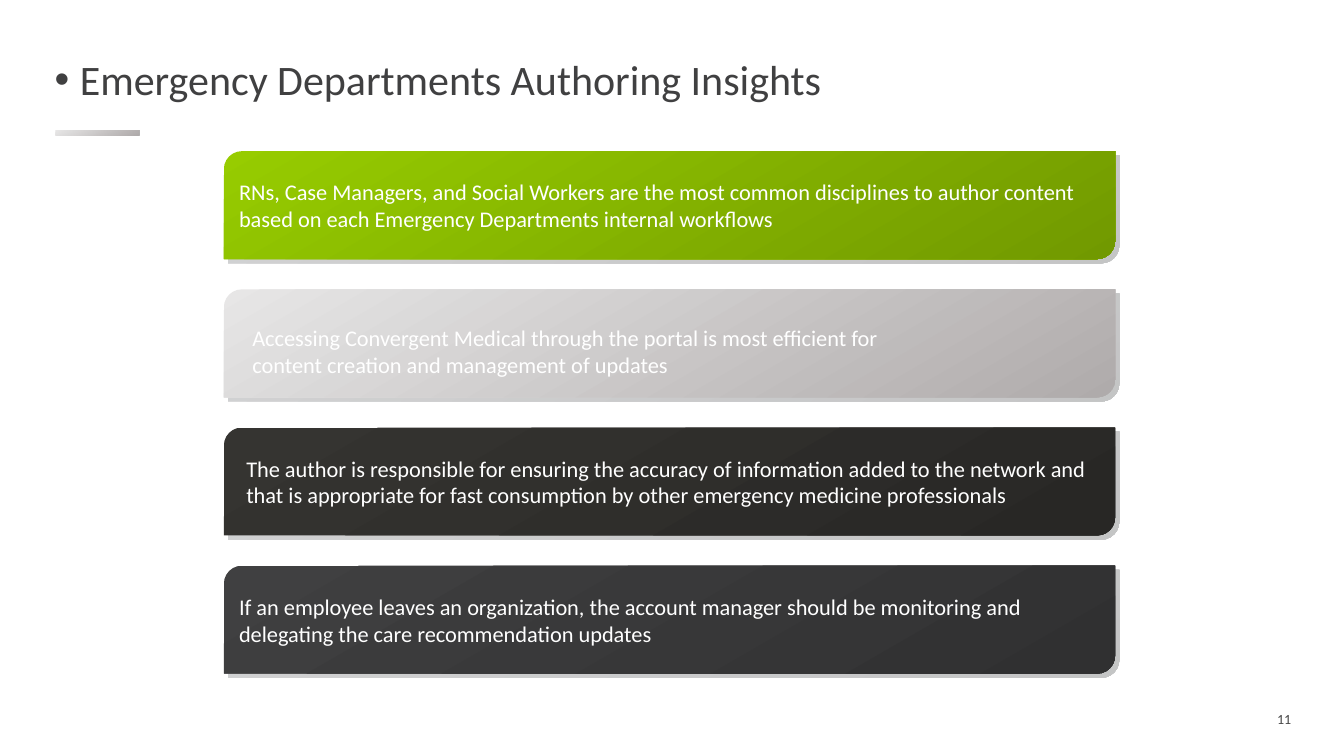
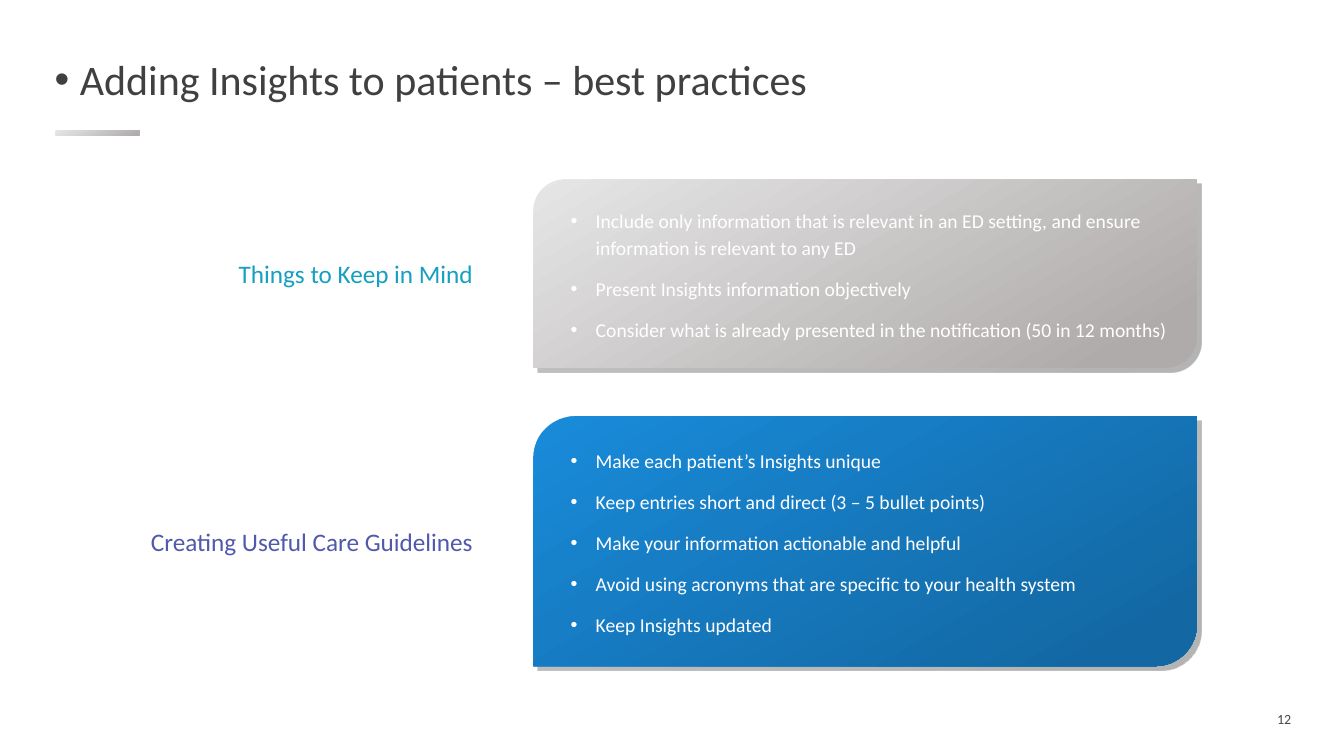
"""Build two slides on authoring insights: four key statements and two practice lists."""
from dataclasses import dataclass
from typing import NamedTuple

from lxml import etree
from pptx import Presentation, util as u
from pptx.dml.color import RGBColor
from pptx.enum import shapes, text
from pptx.oxml.ns import qn

COLUMNS, ROWS = 160, 90
SLIDE_WIDTH, SLIDE_HEIGHT = u.Inches(13.333), u.Inches(7.5)
FONT = "Calibri"
WHITE, CHARCOAL, NUMBER_GREY = "FFFFFF", "404041", "474747"
TITLE_ONLY, COMPARISON = 5, 4
SHADOW_OFFSET = 0.5
SHADOW_OPACITY = 35


class Box(NamedTuple):
    column: float
    row: float
    columns: float
    rows: float

    def shifted(self, columns: float, rows: float) -> "Box":
        return self._replace(column=self.column + columns, row=self.row + rows)

    def emu(self) -> tuple:
        across, down = SLIDE_WIDTH / COLUMNS, SLIDE_HEIGHT / ROWS
        return (round(self.column * across), round(self.row * down),
                round(self.columns * across), round(self.rows * down))


class Gradient(NamedTuple):
    start: str
    end: str
    end_share: float = 1.0


class Margins(NamedTuple):
    left: float = 0.1
    top: float = 0.05
    right: float = 0.1
    bottom: float = 0.05


@dataclass(frozen=True)
class TextStyle:
    size: int
    color: str = WHITE
    align: text.PP_ALIGN = text.PP_ALIGN.LEFT
    bullet_indent: float = 0
    line_spacing: float = 1.0
    space_before: float = 0


@dataclass(frozen=True)
class Statement:
    wording: str
    fill: Gradient
    margins: Margins = Margins()


@dataclass(frozen=True)
class Practice:
    heading: str
    heading_color: str
    points: tuple
    fill: Gradient
    row: float
    rows: float


SILVER = Gradient("E7E6E6", "AFABAB")
STATEMENT_SHADOW = Gradient("818285", "58595B")
PRACTICE_SHADOW = Gradient("58595B", "2C2C2D", 0.9)

ACCENT_BOX = Box(6.6, 15.5, 10, 0.6)
TITLE_BOX = Box(5.3, 6.25, 149.5, 7)
NUMBER_BOX = Box(113, 84.6, 41.9, 1.9)
FIRST_STATEMENT_BOX = Box(26.65, 18, 106.1, 12.85)
STATEMENT_PITCH = 16.45
FLAT = Margins(top=0, bottom=0)

TITLE_STYLE = TextStyle(30, CHARCOAL, bullet_indent=0.25, line_spacing=0.9, space_before=10)
NUMBER_STYLE = TextStyle(10, NUMBER_GREY, text.PP_ALIGN.RIGHT)
STATEMENT_STYLE = TextStyle(16)
POINT_STYLE = TextStyle(14, bullet_indent=0.31, line_spacing=1.14, space_before=10)

STATEMENTS = (
    Statement("RNs, Case Managers, and Social Workers are the most common disciplines to author "
              "content based on each Emergency Departments internal workflows",
              Gradient("97CC00", "719900")),
    Statement("Accessing Convergent Medical through the portal is most efficient for content "
              "creation and management of updates",
              SILVER, Margins(left=0.23, top=0.2, right=2.04)),
    Statement("The author is responsible for ensuring the accuracy of information added to the "
              "network and that is appropriate for fast consumption by other emergency medicine "
              "professionals",
              Gradient("353431", "282725"), Margins(left=0.17)),
    Statement("If an employee leaves an organization, the account manager should be monitoring "
              "and delegating the care recommendation updates",
              Gradient("404041", "303031")),
)

PRACTICES = (
    Practice("Things to Keep in Mind", "14A0C0",
             ("Include only information that is relevant in an ED setting, and ensure "
              "information is relevant to any ED",
              "Present Insights information objectively",
              "Consider what is already presented in the notification (50 in 12 months)"),
             SILVER._replace(end_share=0.9), 21.35, 22.45),
    Practice("Creating Useful Care Guidelines", "5059AB",
             ("Make each patient’s Insights unique",
              "Keep entries short and direct (3 – 5 bullet points)",
              "Make your information actionable and helpful",
              "Avoid using acronyms that are specific to your health system",
              "Keep Insights updated"),
             Gradient("198BDA", "1368A3", 0.9), 49.55, 29.75),
)


def rgb(color: str) -> RGBColor:
    return RGBColor.from_string(color)


def place(shape, box: Box) -> None:
    shape.left, shape.top, shape.width, shape.height = box.emu()


def add_filled(container, kind, box: Box, gradient: Gradient, opacity: int = 100):
    shape = container.add_shape(kind, *box.emu())
    shape.shadow.inherit = False
    shape.line.fill.background()
    shape.fill.gradient()
    shape.fill.gradient_angle = 300
    first, last = shape.fill.gradient_stops
    first.color.rgb, last.color.rgb = rgb(gradient.start), rgb(gradient.end)
    first.position, last.position = 0, gradient.end_share
    if opacity < 100:
        for color in shape.element.spPr.iter(qn("a:srgbClr")):
            etree.SubElement(color, qn("a:alpha")).set("val", str(opacity * 1000))
    return shape


def add_card(container, box: Box, fill: Gradient, shadow: Gradient):
    kind = shapes.MSO_SHAPE.ROUND_2_DIAG_RECTANGLE
    add_filled(container, kind, box.shifted(SHADOW_OFFSET, SHADOW_OFFSET), shadow, SHADOW_OPACITY)
    return add_filled(container, kind, box, fill)


def add_bullet(paragraph, indent: float) -> None:
    properties = paragraph._p.get_or_add_pPr()
    properties.set("marL", str(u.Inches(indent)))
    properties.set("indent", str(u.Inches(-0.25)))
    etree.SubElement(properties, qn("a:buFont")).set("typeface", "Arial")
    etree.SubElement(properties, qn("a:buChar")).set("char", "•")


def write(shape, lines: tuple, style: TextStyle, margins: Margins = Margins()) -> None:
    frame = shape.text_frame
    frame.text = "\n".join(lines)
    frame.word_wrap = True
    frame.auto_size = text.MSO_AUTO_SIZE.NONE
    frame.vertical_anchor = text.MSO_ANCHOR.MIDDLE
    frame.margin_left, frame.margin_top, frame.margin_right, frame.margin_bottom = map(
        u.Inches, margins)
    for paragraph in frame.paragraphs:
        paragraph.alignment = style.align
        if style.bullet_indent:
            add_bullet(paragraph, style.bullet_indent)
        else:
            properties = paragraph._p.get_or_add_pPr()
            properties.set("marL", "0")
            properties.set("indent", "0")
            etree.SubElement(properties, qn("a:buNone"))
        paragraph.line_spacing = style.line_spacing
        paragraph.space_before = u.Pt(style.space_before)
        paragraph.font.name = FONT
        paragraph.font.size = u.Pt(style.size)
        paragraph.font.bold = False
        paragraph.font.color.rgb = rgb(style.color)


def add_slide(deck, layout: int, title: str, number: int):
    slide = deck.slides.add_slide(deck.slide_layouts[layout])
    place(slide.shapes.title, TITLE_BOX)
    write(slide.shapes.title, (title,), TITLE_STYLE, FLAT)
    write(slide.shapes.add_textbox(*NUMBER_BOX.emu()), (str(number),), NUMBER_STYLE, FLAT)
    return slide


def add_statements(slide) -> None:
    for index, statement in enumerate(STATEMENTS):
        box = FIRST_STATEMENT_BOX.shifted(0, index * STATEMENT_PITCH)
        group = slide.shapes.add_group_shape()
        card = add_card(group.shapes, box, statement.fill, STATEMENT_SHADOW)
        write(card, (statement.wording,), STATEMENT_STYLE, statement.margins)


def add_practices(slide) -> None:
    for index, practice in enumerate(PRACTICES):
        heading = slide.placeholders[2 * index + 1]
        points = slide.placeholders[2 * index + 2]
        card_box = Box(63.5, practice.row, 79, practice.rows)
        add_card(slide.shapes, card_box, practice.fill, PRACTICE_SHADOW)
        slide.shapes.element.append(points.element)
        place(points, card_box._replace(column=66, columns=74.65))
        write(points, practice.points, POINT_STYLE)
        place(heading, card_box._replace(column=15, columns=42.5))
        write(heading, (practice.heading,),
              TextStyle(18, practice.heading_color, text.PP_ALIGN.RIGHT))


def main() -> None:
    deck = Presentation()
    deck.slide_width, deck.slide_height = SLIDE_WIDTH, SLIDE_HEIGHT
    statements = add_slide(deck, TITLE_ONLY, "Emergency Departments Authoring Insights", 11)
    accent = add_filled(statements.shapes, shapes.MSO_SHAPE.RECTANGLE, ACCENT_BOX, SILVER)
    deck.slide_master.shapes.element.append(accent.element)
    add_statements(statements)
    practices = add_slide(deck, COMPARISON, "Adding Insights to patients – best practices", 12)
    add_practices(practices)
    deck.save("out.pptx")


if __name__ == "__main__":
    main()
